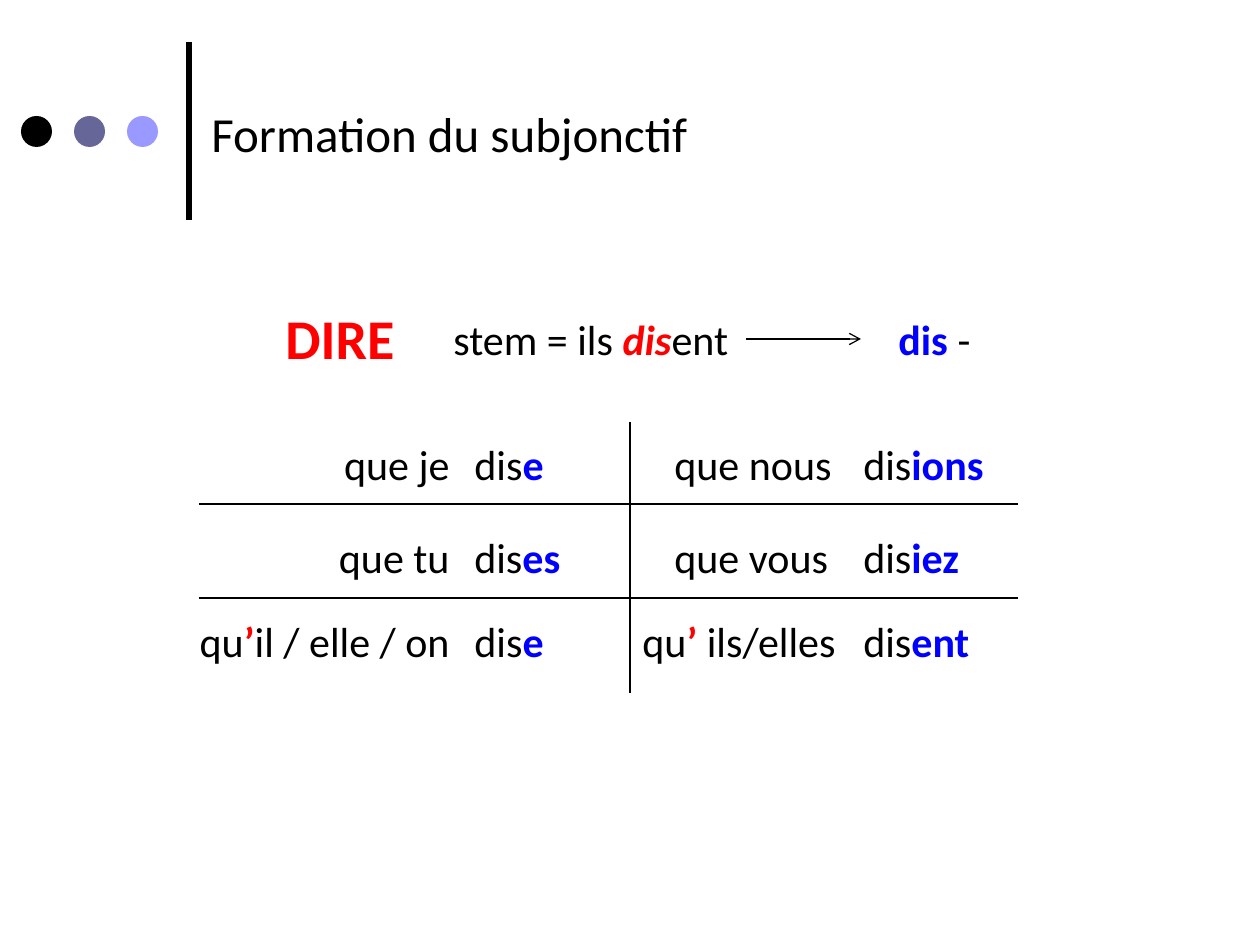
from lxml.etree import SubElement
from pptx import Presentation
from pptx.dml.color import RGBColor
from pptx.enum.shapes import MSO_CONNECTOR as Connector, MSO_SHAPE as Shape
from pptx.enum.text import MSO_AUTO_SIZE as AutoSize, PP_ALIGN as Align
from pptx.oxml.ns import qn
from pptx.util import Emu, Pt

PX_PER_INCH = 126
COLORS = {
    "black": "000000",
    "red": "FF0000",
    "blue": "0000FF",
    "slate": "666699",
    "lavender": "9999FF",
}
# Run styles: colour, bold, italic
PLAIN = ("black", False, False)
ENDING = ("blue", True, False)
ACCENT = ("red", True, False)
STEM = ("red", True, True)


def px(length):
    return Emu(round(length * 914400 / PX_PER_INCH))


def color(name):
    return RGBColor.from_string(COLORS[name])


class SlideBuilder:
    font = "Calibri"

    def __init__(self, slide):
        self.slide = slide

    def text(self, left, top, width, height, runs, size=24, align=Align.LEFT, tab=None):
        """Add a one-paragraph text box from (text, style) runs."""
        box = self.slide.shapes.add_textbox(px(left), px(top), px(width), px(height))
        frame = box.text_frame
        frame.word_wrap = True
        frame.auto_size = AutoSize.SHAPE_TO_FIT_TEXT
        paragraph = frame.paragraphs[0]
        paragraph.alignment = align
        if tab:
            tab_list = SubElement(paragraph._p.get_or_add_pPr(), qn("a:tabLst"))
            SubElement(tab_list, qn("a:tab"), pos=str(px(tab)), algn="l")
        for content, (color_name, bold, italic) in runs:
            run = paragraph.add_run()
            run.text = content
            run.font.name = self.font
            run.font.size = Pt(size)
            run.font.bold = bold
            run.font.italic = italic
            run.font.color.rgb = color(color_name)

    def line(self, x1, y1, x2, y2, weight=0.75, arrow=False):
        connector = self.slide.shapes.add_connector(
            Connector.STRAIGHT, px(x1), px(y1), px(x2), px(y2))
        connector.line.color.rgb = color("black")
        connector.line.width = Pt(weight)
        if arrow:
            SubElement(connector.line._get_or_add_ln(), qn("a:tailEnd"), type="arrow")
        SubElement(connector._element.spPr, qn("a:effectLst"))

    def dot(self, left, top, size, color_name):
        shape = self.slide.shapes.add_shape(
            Shape.OVAL, px(left), px(top), px(size), px(size))
        shape.shadow.inherit = False
        shape.fill.solid()
        shape.fill.fore_color.rgb = color(color_name)
        shape.line.fill.background()


def add_header(builder):
    builder.line(189, 220, 189, 42, weight=3)
    for index, name in enumerate(("black", "slate", "lavender")):
        builder.dot(21 + 53 * index, 116, 31, name)
    builder.text(199, 97, 1029, 72, [("Formation du subjonctif", PLAIN)], size=28)


def add_stem(builder):
    builder.text(273, 297, 158, 81, [("DIRE", ACCENT)], size=32)
    runs = [("stem = ils ", PLAIN), ("dis", STEM), ("ent\t", PLAIN),
            ("dis", ENDING), (" -", PLAIN)]
    builder.text(441, 307, 714, 63, runs, tab=445)
    builder.line(746, 339, 861, 339, arrow=True)


def add_conjugation(builder):
    for y in (504, 598):
        builder.line(199, y, 1018, y)
    builder.line(630, 422, 630, 693)

    verb_left, singular_left, plural_left = 462, 662, 851
    # Top, singular pronoun and its width, ending and its width,
    # plural pronoun and its left edge and width, ending and its width
    elided_singular = [("qu", PLAIN), ("’", ACCENT), ("il / elle / on", PLAIN)]
    elided_plural = [("qu", PLAIN), ("’ ", ACCENT), ("ils/elles", PLAIN)]
    rows = [
        (432, [("que je", PLAIN)], 189, "e", 210,
         [("que nous", PLAIN)], singular_left, 242, "ions", 252),
        (525, [("que tu", PLAIN)], 210, "es", 189,
         [("que vous", PLAIN)], singular_left, 210, "iez", 252),
        (609, elided_singular, 357, "e", 184,
         elided_plural, 630, 252, "ent", 262),
    ]
    for (top, singular, singular_width, singular_ending, verb_width,
         plural, left, plural_width, plural_ending, plural_verb_width) in rows:
        builder.text(verb_left - singular_width, top, singular_width, 64,
                     singular, align=Align.RIGHT)
        builder.text(left, top, plural_width, 64, plural)
        for x, width, ending in ((verb_left, verb_width, singular_ending),
                                 (plural_left, plural_verb_width, plural_ending)):
            builder.text(x, top, width, 64, [("dis", PLAIN), (ending, ENDING)])


def main():
    presentation = Presentation()
    presentation.slide_width = px(1260)
    presentation.slide_height = px(945)
    builder = SlideBuilder(presentation.slides.add_slide(presentation.slide_layouts[6]))
    add_header(builder)
    add_stem(builder)
    add_conjugation(builder)
    presentation.save("out.pptx")


if __name__ == "__main__":
    main()
